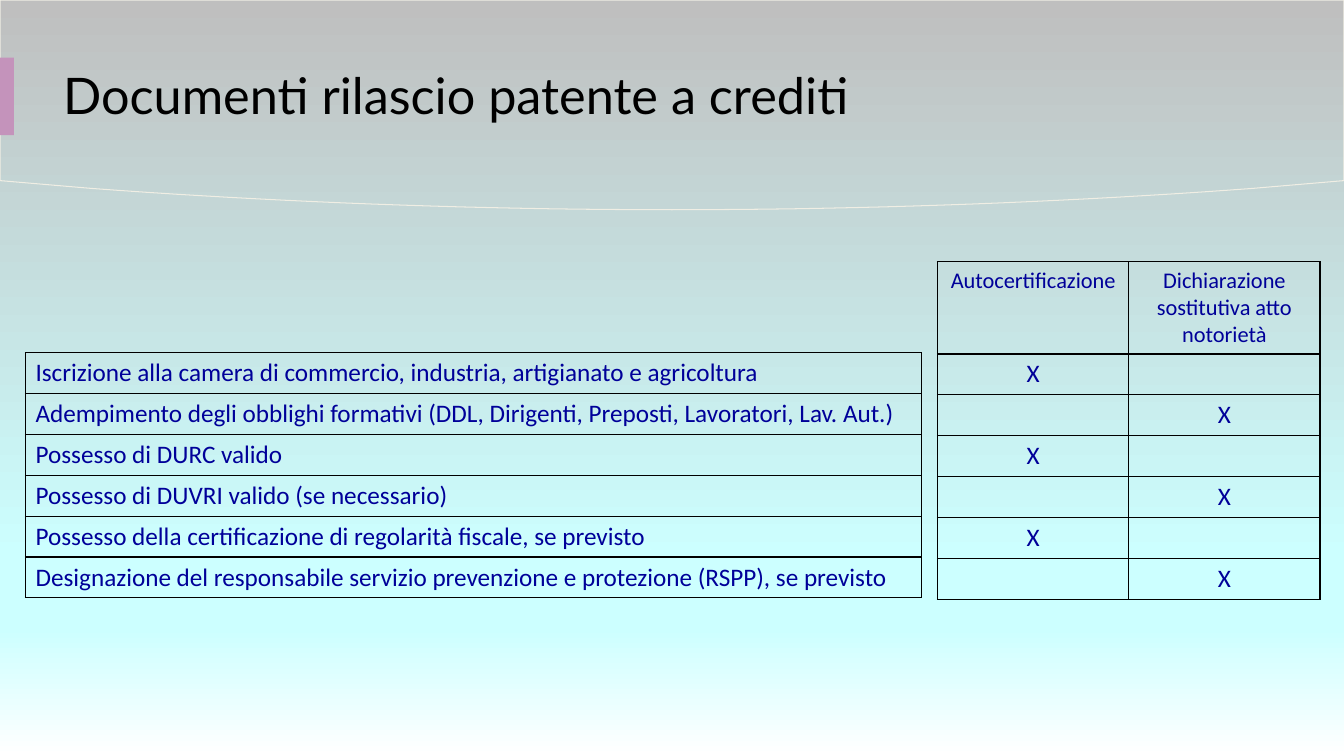
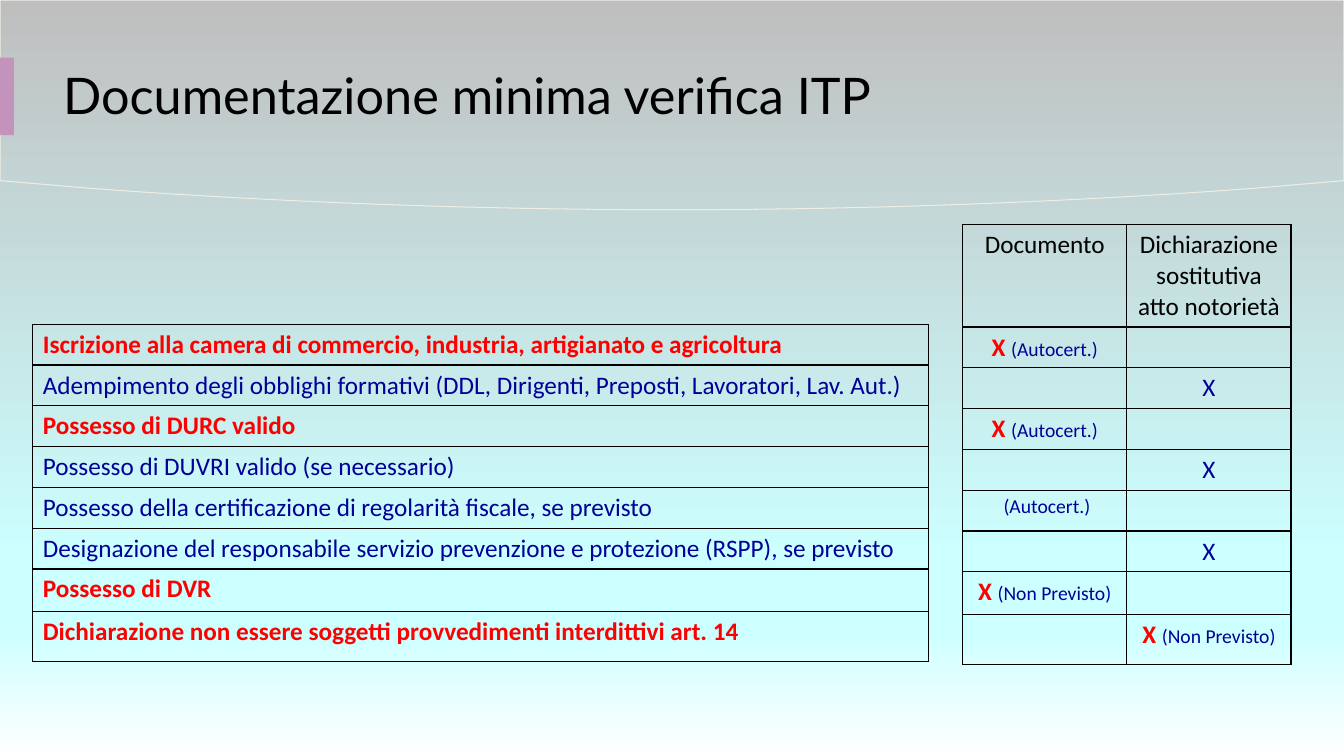
"""Build two slides that list the documents needed for the credit licence."""
from lxml.etree import SubElement
from pptx import Presentation
from pptx.dml.color import RGBColor
from pptx.enum.shapes import MSO_SHAPE as Shape
from pptx.enum.text import MSO_ANCHOR as Anchor, PP_ALIGN as Align
from pptx.oxml.ns import qn
from pptx.util import Pt

COLORS = {
    "grey": "BFBFBF", "aqua": "CCFFFF", "white": "FFFFFF", "cream": "F0EEE4",
    "mauve": "C493BB", "black": "000000", "blue": "000099", "red": "FF0000",
}
STYLES = {
    "normal": {},
    "key": {"color": "red", "bold": True},
    "note": {"size": 14},
    "small": {"size": 16},
    "dark": {"color": "black"},
}
GRADIENT = [(0, "grey"), (74, "aqua"), (83, "aqua"), (100, "white")]
ROW = 29.16

DOCUMENTS = [
    "Iscrizione alla camera di commercio, industria, artigianato e agricoltura",
    "Adempimento degli obblighi formativi (DDL, Dirigenti, Preposti, Lavoratori, Lav. Aut.)",
    "Possesso di DURC valido",
    "Possesso di DUVRI valido (se necessario)",
    "Possesso della certificazione di regolarità fiscale, se previsto",
    "Designazione del responsabile servizio prevenzione e protezione (RSPP), se previsto",
]
EXTRA_DOCUMENTS = [
    "Possesso di DVR",
    "Dichiarazione non essere soggetti provvedimenti interdittivi art. 14",
]
DECLARATION = "Dichiarazione sostitutiva atto notorietà"
CROSS = [("X", "normal")]
SELF_CERTIFIED = [("X ", "key"), ("(Autocert.)", "note")]
NOT_FORESEEN = [("X ", "key"), ("(Non Previsto)", "note")]

SLIDES = [
    {
        "title": "Documenti rilascio patente a crediti",
        "labels": [[(text, "normal")] for text in DOCUMENTS],
        "headers": ["Autocertificazione", DECLARATION],
        "header_style": "small",
        "header_height": 65.6,
        "marks": [CROSS] * 6,
        "heights": [ROW] * 6,
        "label_place": (18.2, 251.9, 640),
        "mark_place": (669.7, 186.9, 273.2),
    },
    {
        "title": "Documentazione minima verifica ITP",
        "labels": [
            [(text, "key" if index in (0, 2, 6, 7) else "normal")]
            for index, text in enumerate(DOCUMENTS + EXTRA_DOCUMENTS)
        ],
        "headers": ["Documento", DECLARATION],
        "header_style": "dark",
        "header_height": 73,
        "marks": [SELF_CERTIFIED, CROSS, SELF_CERTIFIED, CROSS,
                  [(" (Autocert.)", "note")], CROSS, NOT_FORESEEN, NOT_FORESEEN],
        "heights": [ROW] * 6 + [30.5, 35.8],
        "label_place": (23.4, 231.6, 640),
        "mark_place": (687.6, 160.6, 234.6),
    },
]


def add_span(para, text, size=18, color="blue", bold=False, font="Calibri"):
    span = para.add_run()
    span.text = text
    span.font.name = font
    span.font.size = Pt(size)
    span.font.bold = bold
    span.font.color.rgb = RGBColor.from_string(COLORS[color])


def add_grid(page, place, heights, rows, align):
    left, top, width = place
    columns = len(rows[0])
    table = page.shapes.add_table(
        len(rows), columns, Pt(left), Pt(top), Pt(width), Pt(sum(heights))
    ).table
    table.first_row = table.horz_banding = False
    for column in table.columns:
        column.width = Pt(width / columns)
    for row, height, contents in zip(table.rows, heights, rows):
        row.height = Pt(height)
        for cell, spans in zip(row.cells, contents):
            properties = cell._tc.get_or_add_tcPr()
            for side in ("a:lnL", "a:lnR", "a:lnT", "a:lnB"):
                border = SubElement(properties, qn(side), w=str(Pt(1)))
                paint = SubElement(border, qn("a:solidFill"))
                SubElement(paint, qn("a:srgbClr"), val=COLORS["black"])
            cell.fill.background()
            para = cell.text_frame.paragraphs[0]
            para.alignment = align
            if height not in (ROW, heights[0]):
                para.line_spacing = 0.96
            for text, style in spans:
                add_span(para, text, **STYLES[style])


deck = Presentation()
deck.slide_width, deck.slide_height = Pt(960), Pt(540)

backdrop = deck.slide_master.background.fill
backdrop.gradient()
backdrop.gradient_angle = 270
stops = deck.slide_master.element.find(".//" + qn("a:gsLst"))
for stop in list(stops):
    stops.remove(stop)
for percent, name in GRADIENT:
    stop = SubElement(stops, qn("a:gs"), pos=str(percent * 1000))
    SubElement(stop, qn("a:srgbClr"), val=COLORS[name])

half_curve = [(0, 129)]
for step in range(21):
    t = step / 20
    weights = ((1 - t) ** 3, 3 * t * (1 - t) ** 2, 3 * t * t * (1 - t), t ** 3)
    half_curve.append((
        sum(w * x for w, x in zip(weights, (65.5, 193, 333.4, 480))),
        sum(w * y for w, y in zip(weights, (134.6, 144, 149.8, 149.8))),
    ))
curve = half_curve + [(960 - x, y) for x, y in reversed(half_curve[:-1])]
band_points = [(Pt(x), Pt(y)) for x, y in curve + [(960, 0), (0, 0)]]

for content in SLIDES:
    page = deck.slides.add_slide(deck.slide_layouts[6])

    outline = page.shapes.build_freeform(*band_points[0])
    outline.add_line_segments(band_points[1:], close=True)
    band = outline.convert_to_shape()
    band.shadow.inherit = False
    band.fill.background()
    band.line.color.rgb = RGBColor.from_string(COLORS["cream"])
    band.line.width = Pt(0.75)

    accent = page.shapes.add_shape(Shape.RECTANGLE, 0, Pt(41.2), Pt(10), Pt(55.4))
    accent.shadow.inherit = False
    accent.fill.solid()
    accent.fill.fore_color.rgb = RGBColor.from_string(COLORS["mauve"])
    accent.line.fill.background()

    add_grid(page, content["label_place"], content["heights"],
             [[label] for label in content["labels"]], Align.LEFT)

    mark_rows = [[[(text, content["header_style"])] for text in content["headers"]]]
    for index, mark in enumerate(content["marks"]):
        mark_rows.append([mark, []] if index % 2 == 0 else [[], mark])
    add_grid(page, content["mark_place"],
             [content["header_height"]] + content["heights"], mark_rows, Align.CENTER)

    title = page.shapes.add_textbox(Pt(38), Pt(20.2), Pt(871), Pt(100)).text_frame
    title.word_wrap = True
    title.vertical_anchor = Anchor.MIDDLE
    heading = title.paragraphs[0]
    heading.alignment = Align.JUSTIFY
    heading.line_spacing = 0.9
    add_span(heading, content["title"], size=36, color="black", font="Lato")

deck.save("out.pptx")
